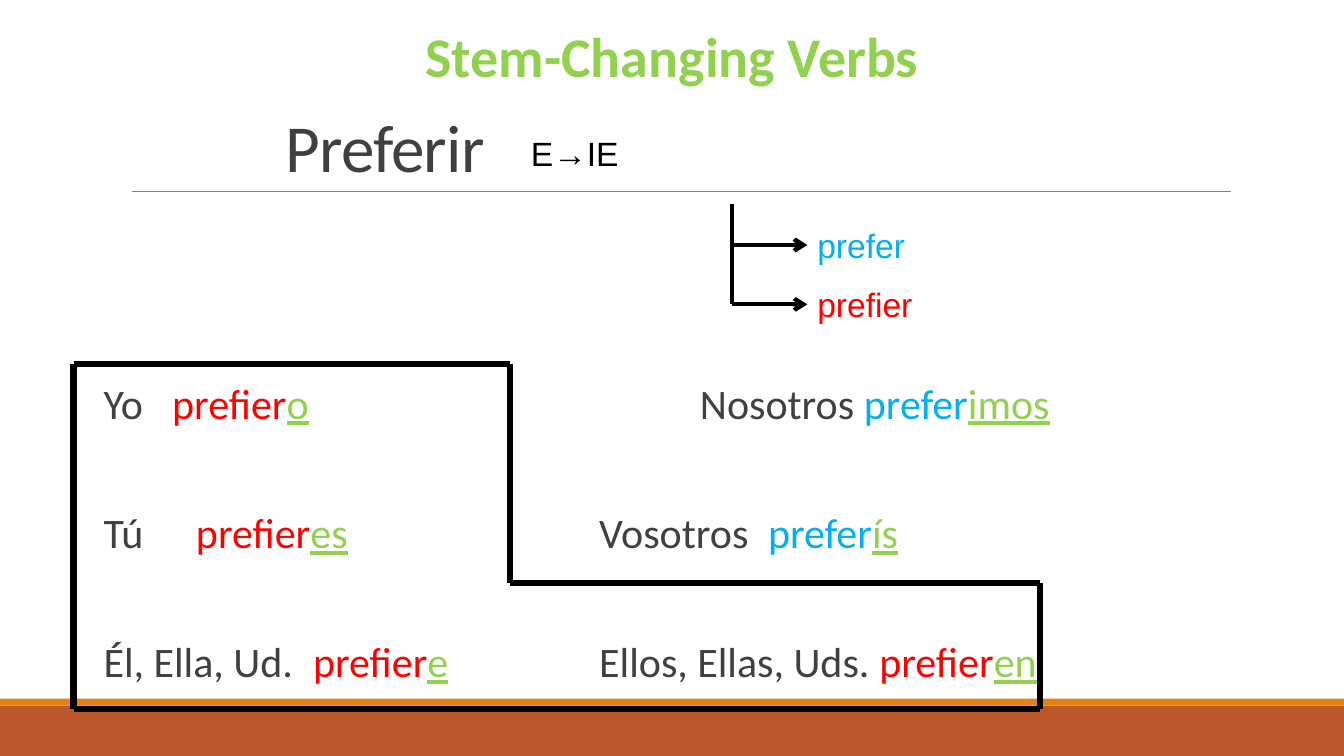
import itertools

import lxml.etree
import pptx
import pptx.dml.color
import pptx.enum.shapes
import pptx.enum.text
import pptx.oxml.ns
import pptx.util

Pt = pptx.util.Pt
qn = pptx.oxml.ns.qn
PP_ALIGN = pptx.enum.text.PP_ALIGN

COLORS = {
    "text": "404040",
    "black": "000000",
    "rule": "808080",
    "regular": "00B0F0",
    "changed": "FF0000",
    "ending": "92D050",
    "band": "BD582C",
    "stripe": "E48312",
}

CONJUGATION = [
    ((49, 426), [("Yo\t", "text"), ("prefier", "changed"), ("o", "ending"),
                 ("\tNosotros ", "text"), ("prefer", "regular"), ("imos", "ending")]),
    ((66, 354, 474.6), [("Tú\t", "text"), ("prefier", "changed"), ("es", "ending"),
                        ("\tVosotros\t", "text"), ("prefer", "regular"), ("ís", "ending")]),
    ((149.6, 354), [("Él, Ella, Ud.\t", "text"), ("prefier", "changed"), ("e", "ending"),
                    ("\tEllos, Ellas, Uds. ", "text"), ("prefier", "changed"), ("en", "ending")]),
]


def rgb(color):
    return pptx.dml.color.RGBColor.from_string(COLORS[color])


def add_bar(s, top, height, color):
    sp = s.shapes.add_shape(pptx.enum.shapes.MSO_SHAPE.RECTANGLE,
                            0, Pt(top), Pt(960), Pt(height))
    sp.shadow.inherit = False
    sp.fill.solid()
    sp.fill.fore_color.rgb = rgb(color)
    sp.line.fill.background()


def add_line(s, start, end, width, color="black", arrow=False):
    line = s.shapes.add_connector(pptx.enum.shapes.MSO_CONNECTOR.STRAIGHT,
                                  *(Pt(v) for v in (*start, *end)))
    line.line.color.rgb = rgb(color)
    line.line.width = Pt(width)
    if arrow:
        ln = line.line._get_or_add_ln()
        lxml.etree.SubElement(ln, qn("a:tailEnd"), type="arrow")
    lxml.etree.SubElement(line.element.spPr, qn("a:effectLst"))


def set_font(p, font, size, color, bold=False):
    p.font.name = font
    p.font.size = Pt(size)
    p.font.color.rgb = rgb(color)
    p.font.bold = bold


def add_label(s, box, text, font, size, color, bold=False, align=PP_ALIGN.LEFT):
    tf = s.shapes.add_textbox(*(Pt(v) for v in box)).text_frame
    tf.word_wrap = True
    p = tf.paragraphs[0]
    p.text = text
    p.alignment = align
    set_font(p, font, size, color, bold)


def set_title(s, text):
    title = s.shapes.title
    title.left, title.top, title.width, title.height = (
        Pt(v) for v in (196.5, 68.4, 275.8, 68.4))
    tf = title.text_frame
    tf.auto_size = pptx.enum.text.MSO_AUTO_SIZE.NONE
    tf.vertical_anchor = pptx.enum.text.MSO_ANCHOR.BOTTOM
    p = tf.paragraphs[0]
    r = p.add_run()
    r.text = text
    r._r.get_or_add_rPr().set("spc", "-50")
    p.alignment = PP_ALIGN.LEFT
    p.line_spacing = 0.85
    set_font(p, "Calibri", 48, "text")


def set_tabs(p, stops):
    pPr = p._p.get_or_add_pPr()
    tabs = lxml.etree.Element(qn("a:tabLst"))
    for stop in stops:
        lxml.etree.SubElement(tabs, qn("a:tab"), pos=str(Pt(stop)), algn="l")
    pPr.find(qn("a:defRPr")).addprevious(tabs)


def add_conjugation(s):
    tf = s.shapes.add_textbox(Pt(74), Pt(270), Pt(706), Pt(240)).text_frame
    tf.word_wrap = True
    tf.margin_left = tf.margin_right = 0
    for i, (stops, parts) in enumerate(CONJUGATION):
        p = tf.paragraphs[0] if i == 0 else tf.add_paragraph()
        p.line_spacing = 0.9
        p.space_after = Pt(60)
        p.font.name = "Calibri"
        p.font.size = Pt(30)
        set_tabs(p, stops)
        for text, color in parts:
            r = p.add_run()
            r.text = text
            r.font.color.rgb = rgb(color)
            r.font.underline = color == "ending"


def add_stems(s):
    x, tip = 522.7, 576.7
    add_line(s, (x, 145.4), (x, 217.4), 3)
    for y, stem, color in ((175, "prefer", "regular"), (217.4, "prefier", "changed")):
        add_line(s, (x, y), (tip, y), 3, arrow=True)
        add_label(s, (tip, y - 18, 180, 36.5), stem, "Arial", 24, color)


def add_boot(s):
    left, middle, right = 52.6, 364.3, 743
    top, step, bottom = 260, 416.2, 506.2
    corners = [(left, top), (middle, top), (middle, step),
               (right, step), (right, bottom), (left, bottom)]
    for start, end in itertools.pairwise(corners + corners[:1]):
        add_line(s, start, end, 4.5)


def main():
    prs = pptx.Presentation()
    prs.slide_width, prs.slide_height = Pt(960), Pt(540)
    s = prs.slides.add_slide(prs.slide_layouts[5])
    add_bar(s, 504, 36, "band")
    add_bar(s, 499, 5, "stripe")
    add_line(s, (94.3, 136.8), (879.1, 136.8), 0.5, "rule")
    set_title(s, "Preferir")
    add_conjugation(s)
    add_stems(s)
    add_boot(s)
    add_label(s, (372.2, 91.4, 108, 36.5), "E→IE", "Arial", 24, "black")
    add_label(s, (162, 12.2, 635.8, 55.4), "Stem-Changing Verbs", "Calibri", 40,
              "ending", True, PP_ALIGN.CENTER)
    prs.save("out.pptx")


if __name__ == "__main__":
    main()
